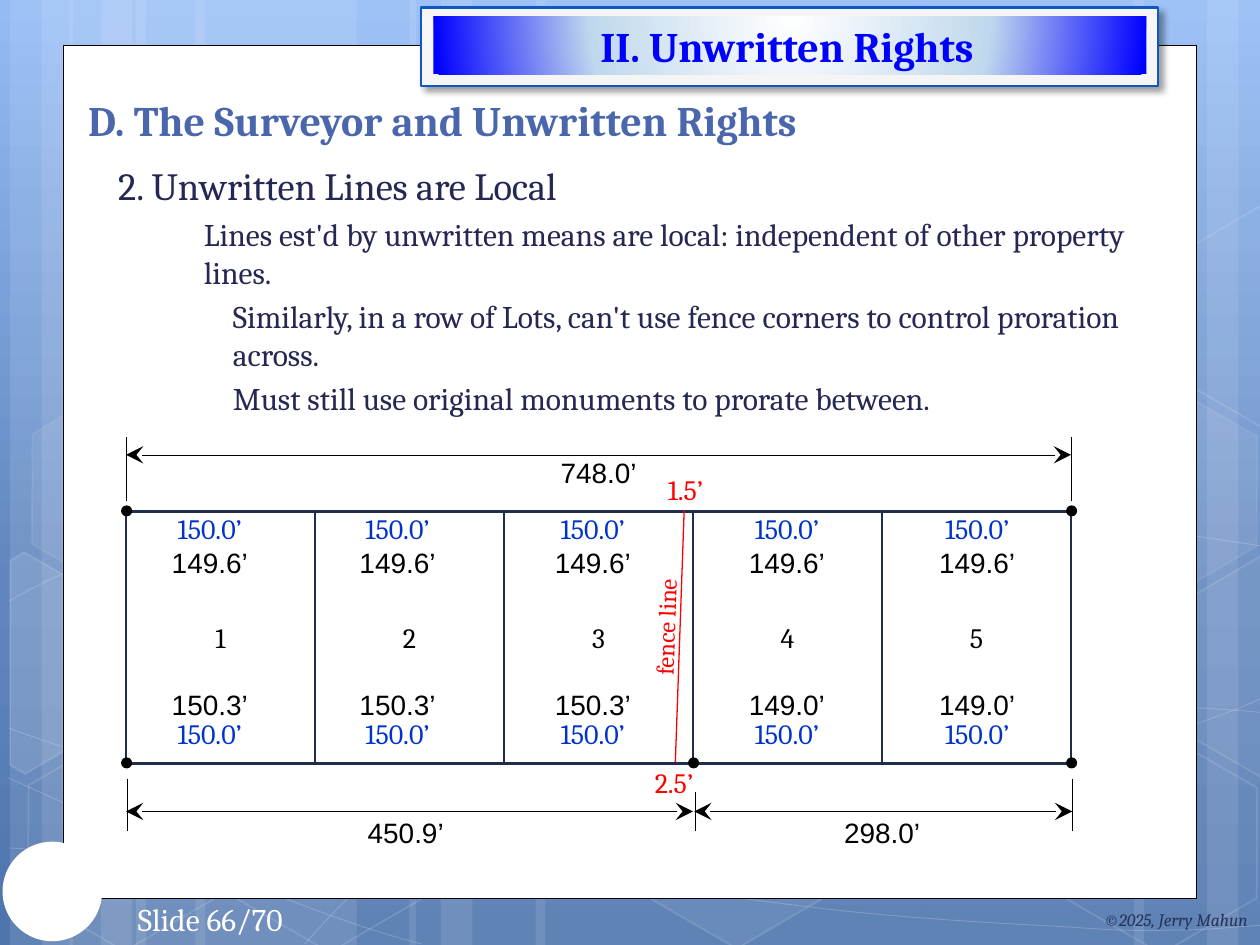
import math
from dataclasses import dataclass
from lxml import etree
from pptx import Presentation
from pptx import util as u
from pptx.dml.color import RGBColor
from pptx.enum import shapes, text
from pptx.oxml.ns import qn


@dataclass(frozen=True)
class Theme:
    white: str = "FFFFFF"
    black: str = "000000"
    red: str = "FF0000"
    record: str = "0033CC"
    lot: str = "202D4B"
    heading: str = "4A66AC"
    body: str = "242852"
    credit: str = "253356"
    banner: str = "0000FF"
    banner_fill: str = "F5F5F5"
    banner_edge: str = "0E58C4"
    sky: tuple = ((0, "93BBF6"), (62, "6186BE"), (100, "4F75AE"))
    glow: tuple = ((0, "FFFFFF"), (56, "C0D8ED"), (100, "0000FF"))
    serif: str = "Cambria"
    sans: str = "Arial"
    title_size: int = 24
    topic_size: int = 22
    body_size: int = 18
    label_size: int = 16
    fence_size: int = 14
    credit_size: int = 10


@dataclass(frozen=True)
class Box:
    left: float
    top: float
    width: float
    height: float

    def place(self, x, y, width, height):
        return Box(self.left + x, self.top + y, width, height)

    def lengths(self):
        return [u.Inches(v) for v in (self.left, self.top, self.width, self.height)]


THEME = Theme()
SHAPE = shapes.MSO_SHAPE
ALIGN = text.PP_ALIGN
ANCHOR = text.MSO_ANCHOR


def child(parent, tag, **attributes):
    return etree.SubElement(parent, qn(tag), {k: str(v) for k, v in attributes.items()})


def fade(parent, percent):
    child(parent.find(".//" + qn("a:srgbClr")), "a:alpha", val=percent * 1000)


def paint(shape, fill=None, line=None, width=1.0, fill_alpha=100, line_alpha=100):
    shape.shadow.inherit = False
    properties = shape.element.spPr
    if fill:
        shape.fill.solid()
        shape.fill.fore_color.rgb = RGBColor.from_string(fill)
        if fill_alpha < 100:
            fade(properties.find(qn("a:solidFill")), fill_alpha)
    else:
        shape.fill.background()
    if line:
        shape.line.color.rgb = RGBColor.from_string(line)
        shape.line.width = u.Pt(width)
        if line_alpha < 100:
            fade(properties.find(qn("a:ln")), line_alpha)
    else:
        shape.line.fill.background()


def apply_gradient(fill, element, stops):
    fill.gradient()
    gradient = element.find(".//" + qn("a:gradFill"))
    for part in list(gradient):
        gradient.remove(part)
    stop_list = child(gradient, "a:gsLst")
    for position, color in stops:
        child(child(stop_list, "a:gs", pos=position * 1000), "a:srgbClr", val=color)
    return gradient


def add_preset(slide, kind, box, **style):
    shape = slide.shapes.add_shape(kind, *box.lengths())
    paint(shape, **style)
    return shape


def add_outline(slide, box, points, close, **style):
    corners = [(u.Inches(box.left + x), u.Inches(box.top + y)) for x, y in points]
    builder = slide.shapes.build_freeform(*corners[0])
    builder.add_line_segments(corners[1:], close=close)
    shape = builder.convert_to_shape()
    paint(shape, **style)
    return shape


def add_curve(slide, box, points, **style):
    shape = add_outline(slide, box, points, False, **style)
    segments = list(shape.element.iter(qn("a:lnTo")))
    for first in range(0, len(segments), 3):
        curve = child(segments[first].getparent(), "a:cubicBezTo")
        for segment in segments[first:first + 3]:
            curve.append(segment[0])
            segment.getparent().remove(segment)


def add_turned_outline(slide, box, points, center, angle, **style):
    cosine, sine = math.cos(math.radians(angle)), math.sin(math.radians(angle))
    offsets = [(x - center[0], y - center[1]) for x, y in points]
    upright = [(center[0] + x * cosine + y * sine, center[1] - x * sine + y * cosine) for x, y in offsets]
    add_outline(slide, box, upright, True, **style).rotation = angle


def add_line(slide, box, start, end, color=THEME.black, width=0, arrows=False):
    ends = [u.Inches(v) for x, y in (start, end) for v in (box.left + x, box.top + y)]
    connector = slide.shapes.add_connector(shapes.MSO_CONNECTOR.STRAIGHT, *ends)
    connector.line.color.rgb = RGBColor.from_string(color)
    line = connector.element.spPr.find(qn("a:ln"))
    line.set("w", str(u.Pt(width)))
    if arrows:
        for tag in ("a:headEnd", "a:tailEnd"):
            child(line, tag, type="stealth", w="lg", len="lg")
    child(connector.element.spPr, "a:effectLst")


def add_run(paragraph, words, size, color, font=THEME.serif, bold=False, italic=False):
    run = paragraph.add_run()
    run.text = words
    run.font.size, run.font.name = u.Pt(size), font
    run.font.bold, run.font.italic = bold, italic
    run.font.color.rgb = RGBColor.from_string(color)


def add_text(slide, box, words, size, color, align=ALIGN.CENTER, anchor=ANCHOR.TOP, wrap=False, **style):
    shape = slide.shapes.add_textbox(*box.lengths())
    frame = shape.text_frame
    frame.word_wrap, frame.vertical_anchor = wrap, anchor
    frame.paragraphs[0].alignment = align
    add_run(frame.paragraphs[0], words, size, color, **style)
    return shape


def draw_backdrop(slide, box):
    gradient = apply_gradient(slide.background.fill, slide.element, THEME.sky)
    child(gradient, "a:lin", ang=5400000, scaled=0)
    bands = ((1.08, 1.75), (0.08, 0.5), (0.33, 0.83), (1.55, 1.75), (0.55, 0.5), (0.8, 0.83),
             (7.33, 1.75), (9.58, 0.5), (9, 0.83), (4.25, 3.08), (3.25, 0.5), (3.5, 0.83))
    for x, width in bands:
        add_preset(slide, SHAPE.RECTANGLE, box.place(x, 0, width, box.height), fill=THEME.white, fill_alpha=10)
    curves = (
        ((0.07, 6.73), (0.61, 6.76), (1.15, 6.79), (1.9, 6.78), (2.65, 6.77), (3.58, 6.75), (4.58, 6.65),
         (5.58, 6.55), (7, 6.36), (7.92, 6.17), (8.83, 5.98), (9.77, 5.68), (10.07, 5.51)),
        ((0.07, 4.77), (0.36, 4.61), (0.65, 4.46), (1.21, 4.31), (1.78, 4.16), (2.59, 3.94), (3.47, 3.87),
         (4.36, 3.8), (5.44, 3.79), (6.54, 3.87), (7.64, 3.95), (9.47, 4.26), (10.07, 4.34)),
        ((0.06, 6.17), (1.27, 6.72), (2.47, 7.27), (3.34, 7.49)),
        ((0.07, 5.78), (0.38, 5.89), (0.7, 6), (1.28, 6.16), (1.86, 6.31), (2.73, 6.56), (3.57, 6.73),
         (4.4, 6.9), (5.45, 7.08), (6.28, 7.18), (7.11, 7.29), (8, 7.33), (8.53, 7.36),
         (9.05, 7.4), (9.19, 7.38), (9.45, 7.38), (9.71, 7.37), (9.89, 7.35), (10.07, 7.34)),
        ((2.42, 7.49), (2.6, 7.29), (2.78, 7.09), (3.02, 6.91), (3.26, 6.73), (3.6, 6.53), (3.88, 6.39),
         (4.16, 6.25), (4.33, 6.19), (4.7, 6.09), (5.06, 5.99), (5.73, 5.85), (6.08, 5.78),
         (6.44, 5.71), (6.49, 5.71), (6.8, 5.69), (7.11, 5.66), (7.6, 5.63), (7.94, 5.62),
         (8.29, 5.61), (8.86, 5.62), (9.53, 5.62), (9.71, 5.63), (9.88, 5.64), (10.06, 5.66)))
    for points in curves:
        add_curve(slide, box, points, line=THEME.white, width=0.5, line_alpha=20)
    hexagons = ((3.34, 0.36, 4, 8), (4.97, 5.89, 6, 12), (0.11, 5.91, 0, 12), (0.14, 3.12, 7, 8),
                (1.74, 5.92, 0, 12), (7.53, 4.53, 10, 12), (8.34, 5.93, 0, 12), (8.34, 3.14, 7, 8))
    for x, y, fill_alpha, line_alpha in hexagons:
        hexagon = add_preset(slide, SHAPE.HEXAGON, box.place(x, y, 1.75, 1.52), line=THEME.white,
                             fill=THEME.white if fill_alpha else None, fill_alpha=fill_alpha, line_alpha=line_alpha)
        hexagon.adjustments[0] = 0.285
        hexagon.rotation = 30
    left_edge = ((0.08, 4.45), (0.19, 4.38), (0.96, 4.82), (0.95, 5.7), (0.2, 6.14), (0.08, 6.07))
    right_edge = ((9.26, 4.85), (10.01, 4.41), (10.09, 4.46), (10.09, 6.13), (10.02, 6.17), (9.26, 5.73))
    upper_edge = [(x, y - 2.78) for x, y in right_edge]
    for points, center, alpha in ((left_edge, (0.36, 5.35), 10), (right_edge, (9.85, 5.2), 4),
                                  (upper_edge, (9.85, 2.42), 0)):
        add_turned_outline(slide, box, points, center, 30, fill=THEME.white if alpha else None,
                           fill_alpha=alpha, line=THEME.white, line_alpha=12)


def draw_page(slide, box):
    add_preset(slide, SHAPE.RECTANGLE, box, fill=THEME.white, line=THEME.black, width=0.5)


def draw_banner(slide, box):
    plate = add_preset(slide, SHAPE.RECTANGLE, box, fill=THEME.banner_fill, line=THEME.banner_edge, width=1.25)
    shadow = child(plate.element.spPr.find(qn("a:effectLst")), "a:outerShdw", blurRad=u.Pt(4), dist=u.Pt(3),
                   dir=2700000, algn="tl", rotWithShape=0)
    child(shadow, "a:srgbClr", val=THEME.black)
    fade(shadow, 40)
    inset = add_preset(slide, SHAPE.RECTANGLE, box.place(0.1, 0.07, 5.66, 0.46))
    gradient = apply_gradient(inset.fill, inset.element, THEME.glow)
    child(child(gradient, "a:path", path="circle"), "a:fillToRect", l=50000, t=-80000, r=50000, b=180000)
    add_text(slide, box.place(1.06, 0.05, 3.69, 0.5), "II. Unwritten Rights",
             THEME.title_size, THEME.banner, bold=True)


def draw_footer(slide, box):
    add_preset(slide, SHAPE.OVAL, box.place(0.02, 0, 0.79, 0.79), fill=THEME.white)
    add_text(slide, box.place(0.75, 0.41, 1.84, 0.4), "Slide 66/70", THEME.body_size, THEME.white, wrap=True)
    add_text(slide, box.place(8.17, 0.42, 1.83, 0.4), "©2025, Jerry Mahun", THEME.credit_size, THEME.credit,
             ALIGN.RIGHT, ANCHOR.MIDDLE, True, italic=True)


def draw_body(slide, box):
    add_text(slide, box.place(0.01, 0, 7.68, 0.47), "D. The Surveyor and Unwritten Rights", THEME.title_size,
             THEME.heading, ALIGN.LEFT, ANCHOR.BOTTOM, True, bold=True)
    shape = add_text(slide, box.place(0.18, 0.51, 8.46, 5.32), "2. Unwritten Lines are Local",
                     THEME.topic_size, THEME.body, ALIGN.LEFT, wrap=True)
    frame = shape.text_frame
    points = ((0.75, "Lines est'd by unwritten means are local: independent of other property lines."),
              (0.98, "Similarly, in a row of Lots, can't use fence corners to control proration across."),
              (0.98, "Must still use original monuments to prorate between."))
    for indent, words in points:
        paragraph = frame.add_paragraph()
        paragraph.space_before = u.Pt(0.2 * THEME.body_size)
        add_run(paragraph, words, THEME.body_size, THEME.body)
    indents = [0.07] + [indent for indent, words in points]
    for paragraph, indent in zip(frame.paragraphs, indents):
        paragraph._p.get_or_add_pPr().set("marL", str(u.Inches(indent)))


def draw_plat(slide, box):
    lot_width = box.width / 5
    for index in range(5):
        lot = add_preset(slide, SHAPE.RECTANGLE, box.place(index * lot_width, 0, lot_width, box.height),
                         line=THEME.lot, width=1.25)
        lot.text_frame.vertical_anchor = ANCHOR.MIDDLE
        lot.text_frame.paragraphs[0].alignment = ALIGN.CENTER
        add_run(lot.text_frame.paragraphs[0], str(index + 1), THEME.label_size, THEME.black)
    rows = ((-0.05, ["150.0’"] * 5, THEME.record, THEME.serif),
            (0.22, ["149.6’"] * 5, THEME.black, THEME.sans),
            (1.35, ["150.3’"] * 3 + ["149.0’"] * 2, THEME.black, THEME.sans),
            (1.58, ["150.0’"] * 5, THEME.record, THEME.serif))
    for y, labels, color, font in rows:
        for x, label in zip((0.26, 1.75, 3.3, 4.84, 6.35), labels):
            add_text(slide, box.place(x, y, 0.81, 0.37), label, THEME.label_size, color, font=font)
    add_line(slide, box, (4.43, -0.01), (4.36, 1.99), THEME.red, 0.75)
    for x, y, label in ((4.17, -0.36, "1.5’"), (4.08, 1.97, "2.5’")):
        add_text(slide, box.place(x, y, 0.54, 0.37), label, THEME.label_size, THEME.red)
    fence = add_text(slide, box.place(3.87, 0.83, 0.83, 0.24), "fence line", THEME.fence_size, THEME.red, ALIGN.RIGHT)
    frame = fence.text_frame
    frame.margin_left = frame.margin_top = frame.margin_right = frame.margin_bottom = 0
    fence.rotation = 272
    for x, y in ((0, 0), (7.5, 0), (0, 2), (4.5, 2), (7.5, 2)):
        add_preset(slide, SHAPE.OVAL, box.place(x - 0.03, y - 0.04, 0.07, 0.07),
                   fill=THEME.black, line=THEME.black, width=1.25)
    for x, top, bottom in ((0, -0.59, -0.09), (7.5, -0.59, -0.09), (0.01, 2.13, 2.53),
                           (7.51, 2.13, 2.53), (4.52, 2.23, 2.53)):
        add_line(slide, box, (x, top), (x, bottom))
    for start, end, y, label_x, label_y, label in ((0, 7.5, -0.45, 3.34, -0.49, "748.0’"),
                                                  (0, 4.5, 2.38, 1.81, 2.36, "450.9’"),
                                                  (4.51, 7.51, 2.38, 5.59, 2.36, "298.0’")):
        add_line(slide, box, (start, y), (end, y), arrows=True)
        add_text(slide, box.place(label_x, label_y, 0.82, 0.37), label, THEME.label_size, THEME.black, font=THEME.sans)


def main():
    presentation = Presentation()
    presentation.slide_width, presentation.slide_height = u.Inches(10), u.Inches(7.5)
    slide = presentation.slides.add_slide(presentation.slide_layouts[6])
    draw_backdrop(slide, Box(0, 0, 10, 7.5))
    draw_page(slide, Box(0.5, 0.36, 9, 6.77))
    draw_banner(slide, Box(3.34, 0.06, 5.85, 0.62))
    draw_footer(slide, Box(0, 6.68, 10, 0.82))
    draw_body(slide, Box(0.59, 0.73, 8.64, 5.83))
    draw_plat(slide, Box(1, 4.06, 7.5, 2))
    presentation.save("out.pptx")


if __name__ == "__main__":
    main()
